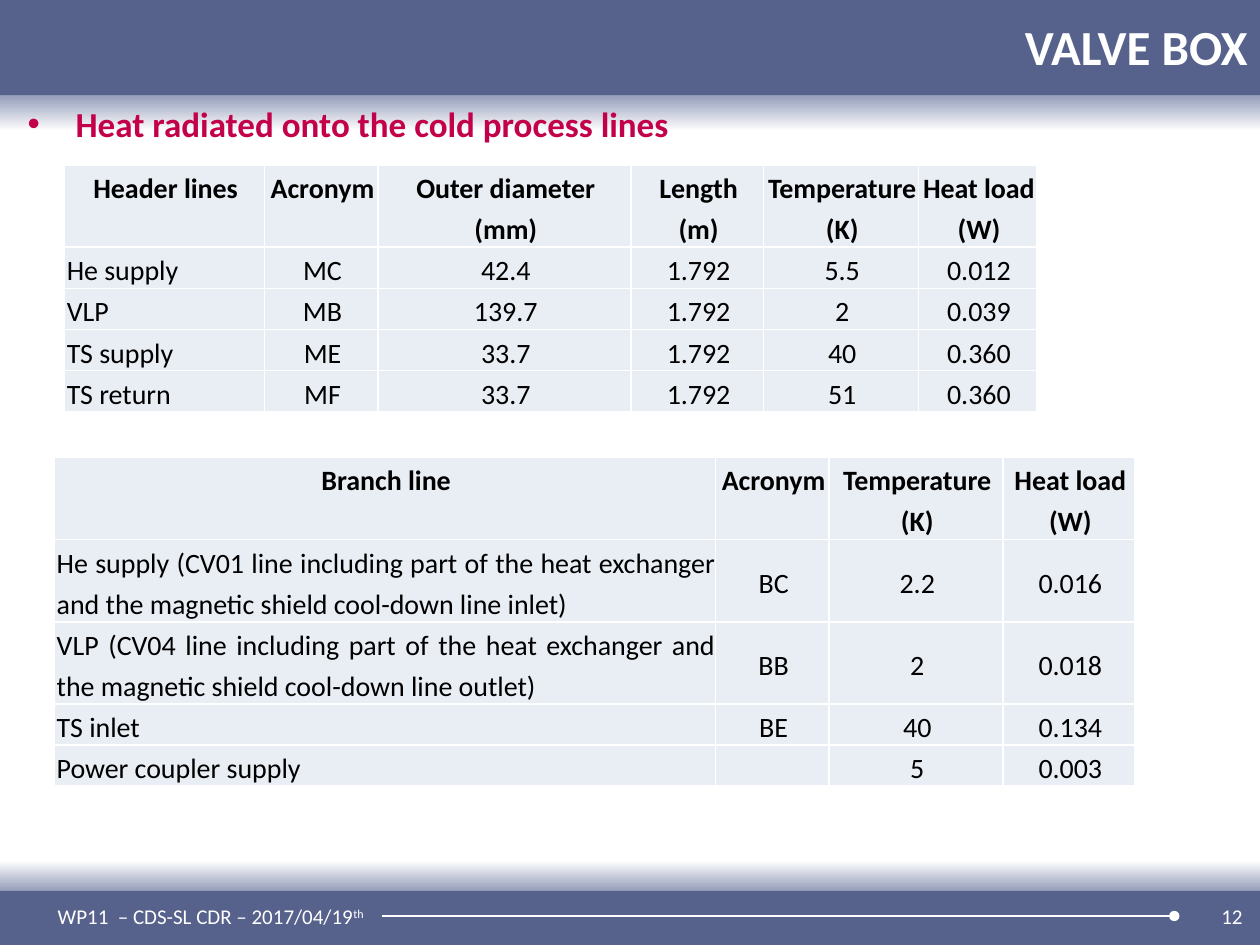
import pptx
import pptx.dml.color
import pptx.enum.shapes
import pptx.enum.text
import pptx.oxml
import pptx.oxml.ns
import pptx.util
from pptx.util import Inches

RGBColor = pptx.dml.color.RGBColor
Align = pptx.enum.text.PP_ALIGN
Anchor = pptx.enum.text.MSO_ANCHOR
SLATE = RGBColor(0x56, 0x62, 0x8C)
HAZE = RGBColor(0x96, 0x9E, 0xBA)
CRIMSON = RGBColor(0xC3, 0x00, 0x4A)
CELL_BLUE = RGBColor(0xE9, 0xED, 0xF4)
WHITE = RGBColor(0xFF, 0xFF, 0xFF)
BLACK = RGBColor(0, 0, 0)

HEADER_LINES = [
    ["Header lines", "Acronym", "Outer diameter\n(mm)", "Length\n(m)",
     "Temperature\n(K)", "Heat load\n(W)"],
    ["He supply ", "MC", "42.4", "1.792", "5.5", "0.012"],
    ["VLP", "MB", "139.7", "1.792", "2", "0.039"],
    ["TS supply", "ME", "33.7", "1.792", "40", "0.360"],
    ["TS return", "MF", "33.7", "1.792", "51", "0.360"],
]
BRANCH_LINES = [
    ["Branch line", "Acronym", "Temperature\n(K)", "Heat load\n(W)"],
    ["He supply (CV01 line including part of the heat exchanger and the "
     "magnetic shield cool-down line inlet)", "BC", "2.2", "0.016"],
    ["VLP (CV04 line including part of the heat exchanger and the "
     "magnetic shield cool-down line outlet)", "BB", "2", "0.018"],
    ["TS inlet", "BE", "40", "0.134"],
    ["Power coupler supply", "", "5", "0.003"],
]


def xml(tag, attributes="", content=""):
    namespace = pptx.oxml.ns.nsdecls("a")
    return pptx.oxml.parse_xml(
        f"<a:{tag} {namespace} {attributes}>{content}</a:{tag}>")


def place(shape, left, top, width, height):
    shape.left, shape.top = Inches(left), Inches(top)
    shape.width, shape.height = Inches(width), Inches(height)


def style(para, size, color, bold=False):
    for span in para.runs:
        span.font.name = "Calibri"
        span.font.size = pptx.util.Pt(size)
        span.font.bold = bold
        span.font.color.rgb = color


def set_margins(holder, left, top, right, bottom):
    holder.margin_left, holder.margin_top = Inches(left), Inches(top)
    holder.margin_right, holder.margin_bottom = Inches(right), Inches(bottom)


def add_band(page, top, height, fade_angle=None):
    """Full-width band, solid or fading to white along fade_angle."""
    band = page.shapes.add_shape(pptx.enum.shapes.MSO_SHAPE.RECTANGLE, 0,
                                 Inches(top), Inches(10), Inches(height))
    band.shadow.inherit = False
    band.line.fill.background()
    if fade_angle is None:
        band.fill.solid()
        band.fill.fore_color.rgb = SLATE
    else:
        band.fill.gradient()
        band.fill.gradient_angle = fade_angle
        for stop, color in zip(band.fill.gradient_stops, (HAZE, WHITE)):
            stop.color.rgb = color


def add_footer_text(page, left, width, words, align):
    box = page.shapes.add_textbox(Inches(left), Inches(7.07),
                                  Inches(width), Inches(0.4))
    frame = box.text_frame
    frame.word_wrap = True
    frame.vertical_anchor = Anchor.MIDDLE
    para = frame.paragraphs[0]
    para.text = words
    para.alignment = align
    return para


def add_footer(page):
    add_band(page, 6.83, 0.24, fade_angle=90)
    add_band(page, 7.07, 0.43)

    # Rule with a round end
    rule = page.shapes.add_connector(
        pptx.enum.shapes.MSO_CONNECTOR.STRAIGHT,
        Inches(3.03), Inches(7.27), Inches(9.32), Inches(7.27))
    rule.line.color.rgb = WHITE
    rule.line.width = pptx.util.Pt(1.5)
    rule.line._get_or_add_ln().append(xml("tailEnd", 'type="oval"'))
    rule._element.spPr.append(xml("effectLst"))

    # Meeting and page number
    meeting = add_footer_text(page, 0.36, 3.53,
                              "WP11  – CDS-SL CDR – 2017/04/19", Align.LEFT)
    ordinal = meeting.add_run()
    ordinal.text = "th"
    ordinal.font._element.set("baseline", "30000")
    number = add_footer_text(page, 7.63, 2.33, "12", Align.RIGHT)
    for para in (meeting, number):
        style(para, 12, WHITE)


def add_header(page, words):
    add_band(page, 0, 0.76)
    add_band(page, 0.76, 0.28, fade_angle=270)
    title = page.shapes.title
    place(title, 1.06, -0.03, 8.94, 0.79)
    frame = title.text_frame
    frame.text = words
    frame.vertical_anchor = Anchor.MIDDLE
    frame.paragraphs[0].alignment = Align.RIGHT
    style(frame.paragraphs[0], 28, WHITE, bold=True)
    page.shapes._spTree.append(title._element)  # in front of the bands


def add_body(page, words):
    body = page.placeholders[1]
    place(body, 0.2, 0.76, 9.8, 6.32)
    frame = body.text_frame
    set_margins(frame, 0.02, 0.05, 0.02, 0.02)
    frame.vertical_anchor = Anchor.TOP
    para = frame.paragraphs[0]
    para.text = words
    para.space_before = pptx.util.Pt(0)
    properties = para._p.get_or_add_pPr()
    properties.set("marL", str(Inches(0.38)))
    properties.set("indent", str(Inches(-0.38)))
    properties.append(xml("buFont", 'typeface="Arial"'))
    properties.append(xml("buChar", 'char="•"'))
    style(para, 20, CRIMSON, bold=True)
    page.shapes._spTree.append(body._element)  # in front of the bands


def format_cell(cell, words, is_header, is_label):
    set_margins(cell, 0, 0, 0, 0)
    cell.vertical_anchor = Anchor.TOP if is_header else Anchor.MIDDLE
    white_line = f'<a:solidFill><a:srgbClr val="{WHITE}"/></a:solidFill>'
    for side in ("lnL", "lnR", "lnT", "lnB"):
        cell._tc.get_or_add_tcPr().append(xml(side, 'w="12700"', white_line))
    cell.fill.solid()
    cell.fill.fore_color.rgb = CELL_BLUE
    if not words:
        return
    cell.text_frame.text = words
    for para in cell.text_frame.paragraphs:
        para.alignment = (Align.JUSTIFY if is_label and not is_header
                          else Align.CENTER)
        para.line_spacing = 1.2
        para._p.get_or_add_pPr().set("marL", str(Inches(0.02)))
        style(para, 16, BLACK, bold=is_header)


def add_heat_table(page, left, top, widths, heights, rows):
    table = page.shapes.add_table(
        len(rows), len(widths), Inches(left), Inches(top),
        Inches(sum(widths)), Inches(sum(heights))).table
    table.first_row = table.horz_banding = False
    for column, width in zip(table.columns, widths):
        column.width = Inches(width)
    for r, (height, row) in enumerate(zip(heights, rows)):
        table.rows[r].height = Inches(height)
        for c, words in enumerate(row):
            format_cell(table.cell(r, c), words, r == 0, c == 0)


def main():
    deck = pptx.Presentation()
    deck.slide_width, deck.slide_height = Inches(10), Inches(7.5)
    page = deck.slides.add_slide(deck.slide_layouts[1])
    add_footer(page)
    add_header(page, "VALVE BOX")
    add_body(page, "Heat radiated onto the cold process lines")
    one, two = 0.32, 0.65  # heights of one-line and two-line rows
    add_heat_table(page, 0.51, 1.31, [1.59, 0.9, 2.01, 1.05, 1.23, 0.94],
                   [two, one, one, one, one], HEADER_LINES)
    add_heat_table(page, 0.43, 3.63, [5.25, 0.9, 1.38, 1.05],
                   [two, two, two, one, one], BRANCH_LINES)
    deck.save("out.pptx")


if __name__ == "__main__":
    main()
